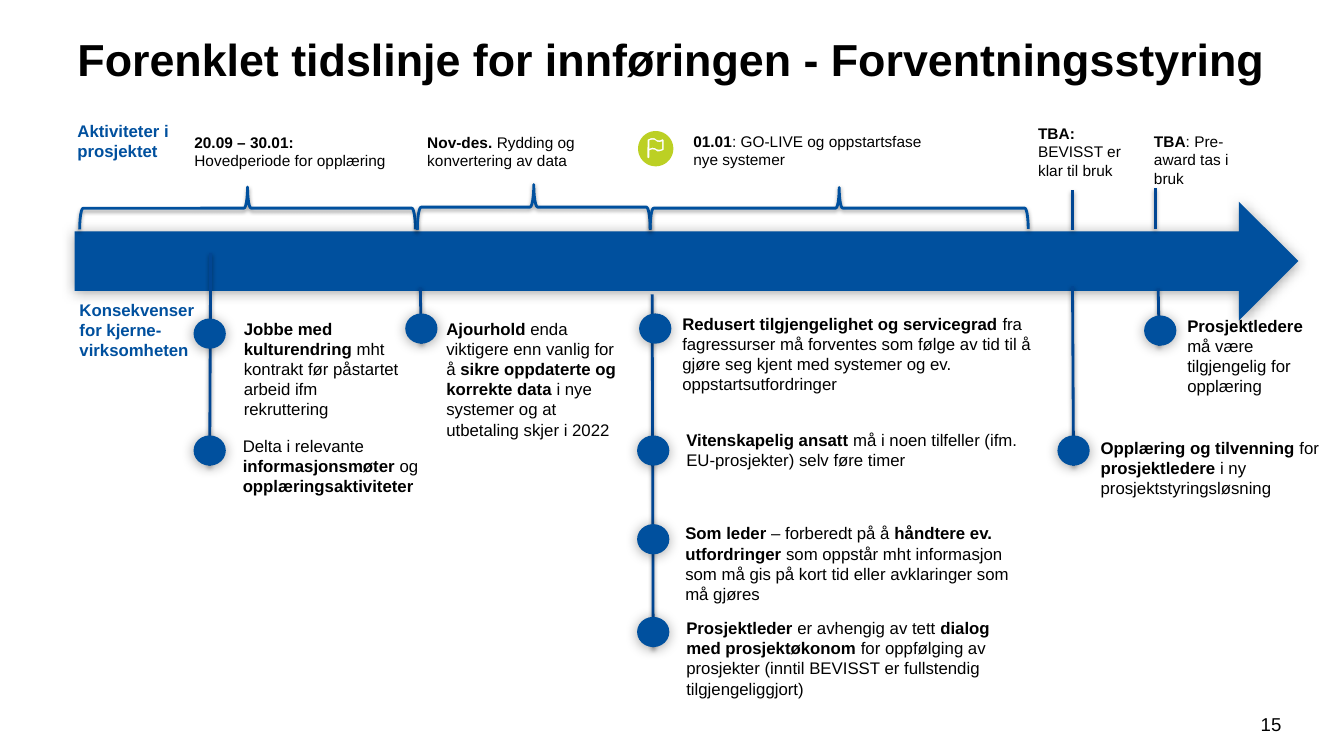
import math

import pptx
import pptx.dml.color
import pptx.enum.shapes
import pptx.enum.text
import pptx.oxml
import pptx.oxml.ns
import pptx.util

CELL = pptx.util.Inches(0.1)
COLUMNS, ROWS = 133.33, 75
DOT_WIDTH, DOT_HEIGHT = 3.2, 3
COLORS = {"blue": "00509E", "stem": "014693", "lime": "BCD024", "black": "000000"}
SHAPES = pptx.enum.shapes.MSO_SHAPE
ALIGN = pptx.enum.text.PP_ALIGN
ANCHOR = pptx.enum.text.MSO_ANCHOR

ACTIVITIES = [
    (18.3, 12.7, 21, 4.7, "**20.09 – 30.01: **Hovedperiode for opplæring"),
    (41.4, 12.7, 17.7, 4.7, "**Nov-des. **Rydding og konvertering av data"),
    (67.8, 12.6, 26.7, 4.7, "**01.01**: GO-LIVE og oppstartsfase nye systemer"),
    (102, 11.8, 12.4, 6.6, "**TBA: **BEVISST er klar til bruk"),
    (113.5, 12.6, 12.4, 6.6, "**TBA**: Pre-award tas i bruk"),
]
CONSEQUENCES = [
    (23.2, 31.1, 17.6, 11.1,
     "**Jobbe med kulturendring **mht kontrakt før påstartet arbeid ifm rekruttering"),
    (23.1, 42.7, 20.2, 7.1,
     "Delta i relevante **informasjonsmøter** og **opplæringsaktiviteter**"),
    (43.3, 31.1, 19, 13.1,
     "**Ajourhold** enda viktigere enn vanlig for å **sikre oppdaterte og korrekte data "
     "**i nye systemer og at utbetaling skjer i 2022"),
    (66.7, 30.6, 37.5, 9.1,
     "**Redusert tilgjengelighet og servicegrad **fra fagressurser må forventes som følge "
     "av tid til å gjøre seg kjent med systemer og ev. oppstartsutfordringer"),
    (67.1, 42.1, 35.9, 5,
     "**Vitenskapelig ansatt **må i noen tilfeller (ifm. EU-prosjekter) selv føre timer"),
    (67, 51.4, 35.9, 9.1,
     "**Som leder **– forberedt på å **håndtere ev. utfordringer **som oppstår mht "
     "informasjon som må gis på kort tid eller avklaringer som må gjøres"),
    (67.1, 60.8, 35.9, 9.1,
     "**Prosjektleder **er avhengig av tett **dialog med prosjektøkonom** for oppfølging "
     "av prosjekter (inntil BEVISST er fullstendig tilgjengeliggjort)"),
    (108.2, 42.9, 23.8, 7.1,
     "**Opplæring og tilvenning **for **prosjektledere** i ny prosjektstyringsløsning"),
    (116.8, 30.8, 13.5, 9.1,
     "**Prosjektledere** må være tilgjengelig for opplæring"),
]
PERIODS = [(7.9, 18.55, 33.3, 4.2), (41.4, 18.3, 23.1, 4.5), (64.5, 18.6, 37.5, 4.1)]
STEMS = [
    (20.9, 25.1, 20.8, 46.2), (41.7, 28.5, 41.8, 34.1), (64.7, 29.2, 64.8, 64.2),
    (106.4, 28.4, 106.5, 46.2), (114.9, 28.6, 115, 34.3),
    (106.4, 18.9, 106.4, 22.8), (114.6, 18.7, 114.6, 22.7),
]
DOTS = [
    (20.8, 33.1), (20.8, 44.7), (41.8, 32.6), (65, 32.6), (64.8, 44.7),
    (64.8, 53.5), (64.8, 62.7), (106.5, 44.7), (115.1, 32.8),
]
FLAG_OUTER = [
    (-0.83, 0.88), (-0.8, -0.9), (-0.45, -1.05), (-0.1, -1.03), (0.15, -0.85),
    (0.4, -0.82), (0.7, -0.95), (0.8, -0.85), (0.8, 0.12), (0.5, 0.25),
    (0.15, 0.27), (-0.1, 0.1), (-0.35, 0.07), (-0.63, 0.18), (-0.63, 0.88), (-0.73, 0.97),
]
FLAG_INNER = [
    (-0.63, -0.82), (-0.35, -0.9), (-0.1, -0.87), (0.15, -0.68), (0.4, -0.65),
    (0.63, -0.73), (0.63, 0.03), (0.4, 0.1), (0.15, 0.08), (-0.1, -0.07),
    (-0.35, -0.1), (-0.63, 0),
]


def grid(*cells):
    return [round(cell * CELL) for cell in cells]


def color(name):
    return pptx.dml.color.RGBColor.from_string(COLORS[name])


def add_shadow(shape, blur, distance, opacity):
    effects = pptx.oxml.parse_xml(
        f'<a:effectLst {pptx.oxml.ns.nsdecls("a")}>'
        f'<a:outerShdw blurRad="{pptx.util.Pt(blur)}" dist="{pptx.util.Pt(distance)}" '
        f'dir="5400000" rotWithShape="0"><a:srgbClr val="{COLORS["black"]}">'
        f'<a:alpha val="{opacity * 1000}"/></a:srgbClr></a:outerShdw></a:effectLst>')
    properties = shape._element.spPr
    for inherited in properties.findall(pptx.oxml.ns.qn("a:effectLst")):
        properties.remove(inherited)
    properties.append(effects)


def add_label(slide, left, top, width, height, words, size=12, ink="black",
              align=ALIGN.LEFT, anchor=ANCHOR.TOP):
    frame = slide.shapes.add_textbox(*grid(left, top, width, height)).text_frame
    frame.word_wrap = True
    frame.vertical_anchor = anchor
    paragraph = frame.paragraphs[0]
    paragraph.alignment = align
    for position, part in enumerate(words.split("**")):
        if part:
            run = paragraph.add_run()
            run.text = part
            run.font.name = "Arial"
            run.font.size = pptx.util.Pt(size)
            run.font.bold = position % 2 == 1
            run.font.color.rgb = color(ink)


def add_solid(slide, kind, left, top, width, height):
    solid = slide.shapes.add_shape(kind, *grid(left, top, width, height))
    solid.fill.solid()
    solid.fill.fore_color.rgb = color("blue")
    solid.line.fill.background()
    add_shadow(solid, 9, 1, 35)


def add_dot(slide, column, row):
    add_solid(slide, SHAPES.OVAL, column - DOT_WIDTH / 2, row - DOT_HEIGHT / 2,
              DOT_WIDTH, DOT_HEIGHT)


def add_period(slide, left, top, span, depth):
    brace = slide.shapes.add_shape(SHAPES.LEFT_BRACE, *grid(
        left + (span - depth) / 2, top - (span - depth) / 2, depth, span))
    brace.rotation = 90
    brace.fill.background()
    brace.line.color.rgb = color("blue")
    brace.line.width = pptx.util.Pt(2)
    add_shadow(brace, 3.1, 1.6, 38)


def add_stem(slide, *ends):
    stem = slide.shapes.add_connector(
        pptx.enum.shapes.MSO_CONNECTOR.STRAIGHT, *grid(*ends))
    stem.line.color.rgb = color("stem")
    stem.line.width = pptx.util.Pt(2)
    add_shadow(stem, 3.1, 1.6, 38)


def add_milestone(slide, column, row, radius):
    rim = [(radius * math.cos(math.radians(angle)), radius * math.sin(math.radians(angle)))
           for angle in range(0, 360, 6)]
    outlines = [[grid(column + x, row + y) for x, y in outline]
                for outline in (rim, FLAG_OUTER, FLAG_INNER)]
    builder = slide.shapes.build_freeform(*outlines[0][0])
    for outline in outlines:
        builder.move_to(*outline[0])
        builder.add_line_segments(outline[1:], close=True)
    milestone = builder.convert_to_shape()
    milestone.fill.solid()
    milestone.fill.fore_color.rgb = color("lime")
    milestone.line.fill.background()
    milestone.shadow.inherit = False


def main():
    deck = pptx.Presentation()
    deck.slide_width, deck.slide_height = grid(COLUMNS, ROWS)
    slide = deck.slides.add_slide(deck.slide_layouts[6])

    add_label(slide, 6.7, 2.6, 120, 6.4,
              "**Forenklet tidslinje for innføringen - Forventningsstyring**",
              size=32, anchor=ANCHOR.MIDDLE)
    add_label(slide, 123.6, 70.2, 5, 4, "15", size=13.3, align=ALIGN.CENTER)
    add_solid(slide, SHAPES.RIGHT_ARROW, 7.4, 20, 121.4, 11.8)
    add_label(slide, 6.7, 11.5, 11.4, 5, "**Aktiviteter i prosjektet**", ink="blue")
    add_label(slide, 6.9, 29.2, 13.7, 7.1, "**Konsekvenser for kjerne-virksomheten**",
              ink="blue")
    for period in PERIODS:
        add_period(slide, *period)
    for stem in STEMS:
        add_stem(slide, *stem)
    for dot in DOTS:
        add_dot(slide, *dot)
    for activity in ACTIVITIES:
        add_label(slide, *activity, size=11)
    for consequence in CONSEQUENCES:
        add_label(slide, *consequence)
    add_milestone(slide, 65.05, 14.75, 1.75)

    deck.save("out.pptx")


if __name__ == "__main__":
    main()
